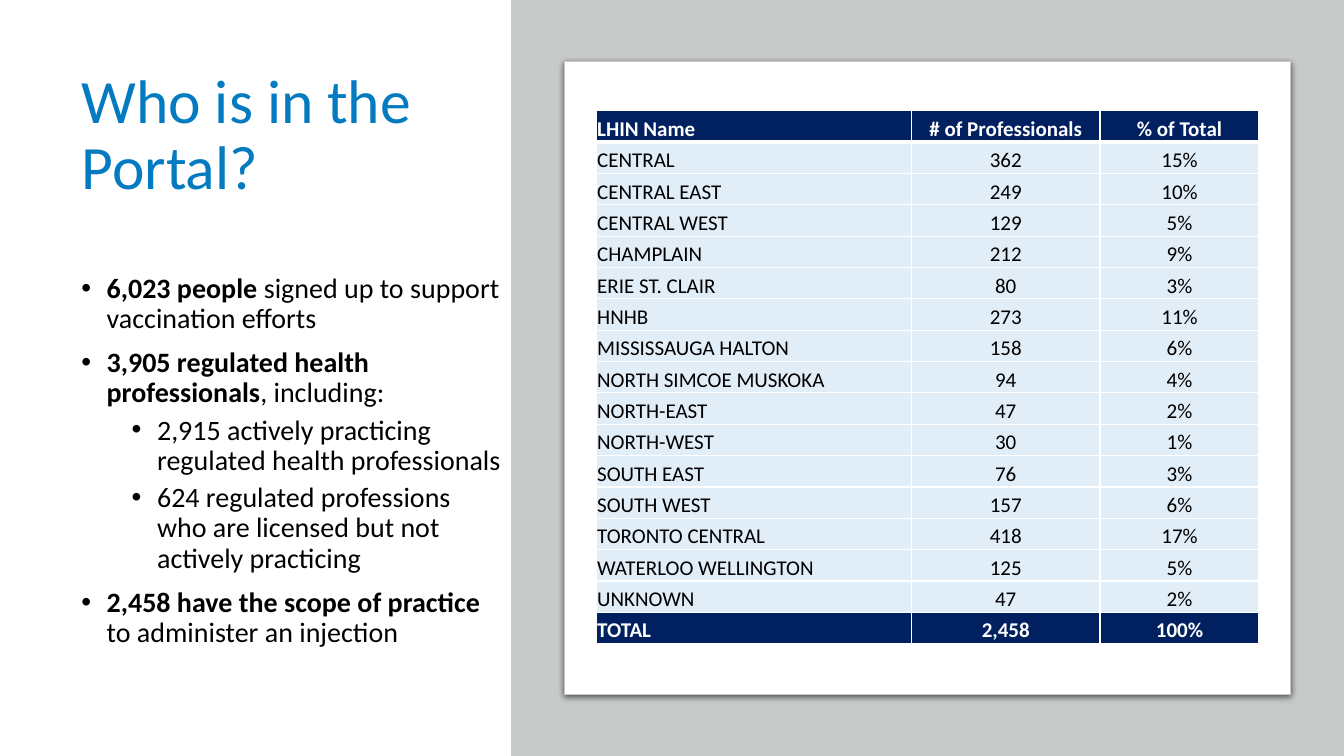
from lxml import etree
from pptx import Presentation
from pptx import util as u
from pptx.dml.color import RGBColor
from pptx.enum import shapes, text
from pptx.oxml.ns import qn

FONT = "Calibri"
BLUE = RGBColor(0x04, 0x7B, 0xC1)
NAVY = RGBColor(0x00, 0x20, 0x60)
PALE = RGBColor(0xE1, 0xED, 0xF7)
GREY = RGBColor(0xC8, 0xCA, 0xCA)
WHITE = RGBColor(0xFF, 0xFF, 0xFF)
BLACK = RGBColor(0x00, 0x00, 0x00)

TITLE = "Who is in the Portal?"

# Level, bold lead, regular remainder
BULLETS = [
    (0, "6,023 people", " signed up to support vaccination efforts"),
    (0, "3,905 regulated health professionals", ", including:"),
    (1, "", "2,915 actively practicing regulated health professionals"),
    (1, "", "624 regulated professions who are licensed but not actively practicing"),
    (0, "2,458 have the scope of practice ", "to administer an injection"),
]

REGIONS = [
    ("LHIN Name", "# of Professionals", "% of Total"),
    ("CENTRAL", "362", "15%"),
    ("CENTRAL EAST", "249", "10%"),
    ("CENTRAL WEST", "129", "5%"),
    ("CHAMPLAIN", "212", "9%"),
    ("ERIE ST. CLAIR", "80", "3%"),
    ("HNHB", "273", "11%"),
    ("MISSISSAUGA HALTON", "158", "6%"),
    ("NORTH SIMCOE MUSKOKA", "94", "4%"),
    ("NORTH-EAST", "47", "2%"),
    ("NORTH-WEST", "30", "1%"),
    ("SOUTH EAST", "76", "3%"),
    ("SOUTH WEST", "157", "6%"),
    ("TORONTO CENTRAL", "418", "17%"),
    ("WATERLOO WELLINGTON", "125", "5%"),
    ("UNKNOWN", "47", "2%"),
    ("TOTAL", "2,458", "100%"),
]
COLUMN_WIDTHS = [u.Cm(7.95), u.Cm(4.75), u.Cm(4.01)]
ROW_HEIGHT = u.Cm(0.79)


def set_font(paragraph, size, color, bold=None):
    font = paragraph.font
    font.name, font.size, font.bold = FONT, u.Pt(size), bold
    font.color.rgb = color


def add_child(parent, tag, **attributes):
    child = etree.SubElement(parent, qn(tag))
    for name, value in attributes.items():
        child.set(name, str(value))
    return child


def add_bullet(paragraph, left, hanging):
    properties = paragraph._p.get_or_add_pPr()
    properties.set("marL", str(left))
    properties.set("indent", str(-hanging))
    add_child(properties, "a:buFont", typeface="Arial")
    add_child(properties, "a:buChar", char="•")


def add_borders(cell, bottom_width):
    properties = cell._tc.get_or_add_tcPr()
    for index, side in enumerate("LRTB"):
        width = bottom_width if side == "B" else u.Pt(1)
        line = add_child(properties, f"a:ln{side}", w=width)
        add_child(add_child(line, "a:solidFill"), "a:srgbClr", val=WHITE)
        properties.insert(index, line)


def add_block(slide, kind, left, top, width, height, color):
    shape = slide.shapes.add_shape(kind, left, top, width, height)
    shape.shadow.inherit = False
    shape.fill.solid()
    shape.fill.fore_color.rgb = color
    shape.line.fill.background()
    return shape


def fill_message(slide, left, top, width, height):
    # Title
    title = slide.shapes.title
    title.left, title.top, title.width, title.height = left, top, width, u.Cm(4.5)
    title.text_frame.text = TITLE
    title.text_frame.vertical_anchor = text.MSO_ANCHOR.MIDDLE
    paragraph = title.text_frame.paragraphs[0]
    paragraph.alignment = text.PP_ALIGN.LEFT
    paragraph.line_spacing = 0.9
    set_font(paragraph, 44, BLUE)

    # Bulleted key figures
    offset = u.Cm(5.59)
    frame = slide.shapes.add_textbox(
        left, top + offset, width + u.Cm(0.27), height - offset).text_frame
    frame.word_wrap = True
    for index, (level, lead, remainder) in enumerate(BULLETS):
        paragraph = frame.add_paragraph() if index else frame.paragraphs[0]
        paragraph.level = level
        paragraph.line_spacing = 0.9
        paragraph.space_before = u.Pt(5 if level else 10)
        add_bullet(paragraph, u.Cm(0.64 + 1.27 * level), u.Cm(0.64))
        set_font(paragraph, 20, BLACK)
        if lead:
            run = paragraph.add_run()
            run.text, run.font.bold = lead, True
        paragraph.add_run().text = remainder


def add_region_table(slide, left, top):
    table = slide.shapes.add_table(
        len(REGIONS), len(COLUMN_WIDTHS), left, top,
        sum(COLUMN_WIDTHS), ROW_HEIGHT * len(REGIONS)).table
    table.first_row = table.horz_banding = False
    for column, width in zip(table.columns, COLUMN_WIDTHS):
        column.width = width
    for row_index, values in enumerate(REGIONS):
        table.rows[row_index].height = ROW_HEIGHT
        strong = row_index in (0, len(REGIONS) - 1)
        for column_index, value in enumerate(values):
            cell = table.cell(row_index, column_index)
            cell.text = value
            cell.vertical_anchor = text.MSO_ANCHOR.BOTTOM
            cell.margin_left = cell.margin_right = cell.margin_top = u.Cm(0.03)
            cell.margin_bottom = 0
            cell.fill.solid()
            cell.fill.fore_color.rgb = NAVY if strong else PALE
            add_borders(cell, u.Pt(1 if row_index else 3))
            paragraph = cell.text_frame.paragraphs[0]
            paragraph.alignment = (
                text.PP_ALIGN.CENTER if column_index else text.PP_ALIGN.LEFT)
            set_font(paragraph, 15, WHITE if strong else BLACK, strong)


def add_table_panel(slide, left, top, width, height):
    # Grey panel
    add_block(slide, shapes.MSO_SHAPE.RECTANGLE, left, top, width, height, GREY)

    # White card with a soft shadow
    card_left, card_top = left + u.Cm(1.35), top + u.Cm(1.55)
    card = add_block(slide, shapes.MSO_SHAPE.ROUNDED_RECTANGLE,
                     card_left, card_top, u.Cm(18.29), u.Cm(15.95), WHITE)
    card.adjustments[0] = 0
    card.line.color.rgb = GREY
    card.line.width = u.Pt(0.75)
    effects = card._element.spPr.find(qn("a:effectLst"))
    shadow = add_child(effects, "a:outerShdw", blurRad=u.Pt(4.5), dist=u.Pt(1.5),
                       dir=90 * 60000, algn="ctr", rotWithShape=0)
    add_child(add_child(shadow, "a:srgbClr", val=BLACK), "a:alpha", val=63000)

    # Professionals by region
    add_region_table(slide, card_left + u.Cm(0.79), card_top + u.Cm(1.24))


def main():
    presentation = Presentation()
    presentation.slide_width, presentation.slide_height = u.Cm(33.87), u.Cm(19.05)
    slide = presentation.slides.add_slide(presentation.slide_layouts[5])
    fill_message(slide, u.Cm(1.8), u.Cm(1.19), u.Cm(10.8), u.Cm(16.08))
    panel_left = u.Cm(12.88)
    add_table_panel(slide, panel_left, 0, presentation.slide_width - panel_left,
                    presentation.slide_height)
    presentation.save("out.pptx")


if __name__ == "__main__":
    main()
